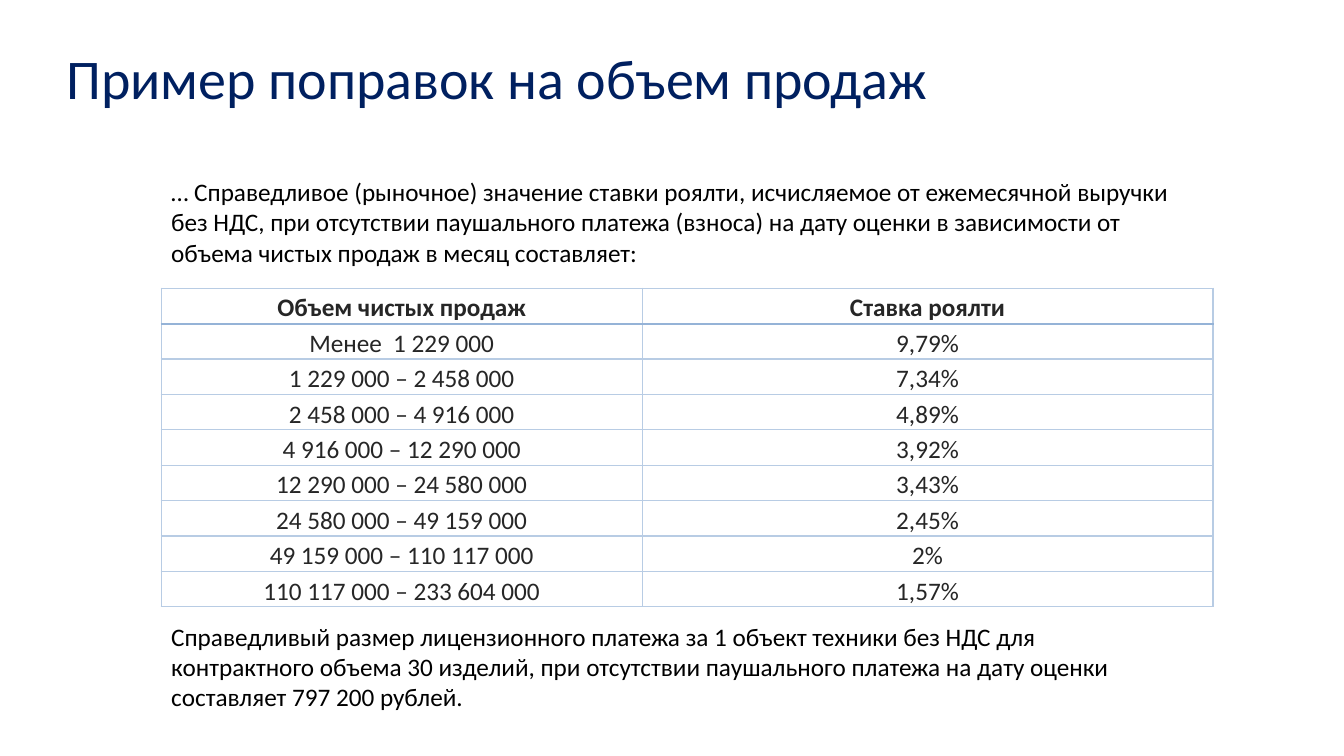
import pptx
import pptx.util
import pptx.dml.color
import pptx.enum.text
import pptx.oxml
import lxml.etree

COLORS = {
    "title": "002060",
    "body": "000000",
    "cell": "262626",
    "border": "B8CCE4",
    "header_border": "95B3D7",
}
ANCHOR = pptx.enum.text.MSO_ANCHOR
ALIGN = pptx.enum.text.PP_ALIGN

presentation = pptx.Presentation()
presentation.slide_width = pptx.util.Inches(13.33)
presentation.slide_height = pptx.util.Inches(7.5)
slide = presentation.slides.add_slide(presentation.slide_layouts[5])

# One percent of the slide's size is the unit of all places
column = presentation.slide_width / 100
row = presentation.slide_height / 100


def box(left, top, width, height):
    return int(left * column), int(top * row), int(width * column), int(height * row)


def format_text(text_frame, size, color, bold=False):
    for paragraph in text_frame.paragraphs:
        for run in paragraph.runs:
            run.font.name = "Calibri"
            run.font.size = pptx.util.Pt(size)
            run.font.bold = bold
            run.font.color.rgb = pptx.dml.color.RGBColor.from_string(COLORS[color])


# Title
title = slide.shapes.title
title.left, title.top, title.width, title.height = box(4.2, 3.33, 92.1, 14.93)
title.text_frame.text = "Пример поправок на объем продаж"
title.text_frame.vertical_anchor = ANCHOR.MIDDLE
title.text_frame.paragraphs[0].alignment = ALIGN.LEFT
title.text_frame.paragraphs[0].line_spacing = 0.9
format_text(title.text_frame, 40, "title")

# Royalty table
rates = [
    ("Объем чистых продаж", "Ставка роялти"),
    ("Менее  1 229 000", "9,79%"),
    ("1 229 000 – 2 458 000", "7,34%"),
    ("2 458 000 – 4 916 000", "4,89%"),
    ("4 916 000 – 12 290 000", "3,92%"),
    ("12 290 000 – 24 580 000", "3,43%"),
    ("24 580 000 – 49 159 000", "2,45%"),
    ("49 159 000 – 110 117 000", "2%"),
    ("110 117 000 – 233 604 000", "1,57%"),
]
table = slide.shapes.add_table(len(rates), 2, *box(12, 38.13, 78.25, 40.8)).table
table.first_row = False
table.horz_banding = False
for table_column, share in zip(table.columns, (35.78, 42.47)):
    table_column.width = int(share * column)

for row_index, values in enumerate(rates):
    for column_index, value in enumerate(values):
        cell = table.cell(row_index, column_index)
        cell.margin_left = cell.margin_right = pptx.util.Inches(0.07)
        cell.margin_top = cell.margin_bottom = 0
        is_rate = row_index > 0 and column_index == 1
        cell.vertical_anchor = ANCHOR.MIDDLE if is_rate else ANCHOR.TOP
        cell.text_frame.text = value
        cell.text_frame.paragraphs[0].alignment = ALIGN.CENTER
        cell.text_frame.paragraphs[0].line_spacing = 1.15
        format_text(cell.text_frame, 18, "cell", bold=row_index == 0)

        # Borders come before the fill in the cell properties
        properties = cell._tc.get_or_add_tcPr()
        for side in ("lnL", "lnR", "lnT", "lnB"):
            under_header = (row_index, side) in ((0, "lnB"), (1, "lnT"))
            color = COLORS["header_border" if under_header else "border"]
            line = lxml.etree.SubElement(properties, pptx.oxml.ns.qn("a:" + side))
            line.set("w", str(pptx.util.Pt(1.5 if under_header else 1)))
            fill = lxml.etree.SubElement(line, pptx.oxml.ns.qn("a:solidFill"))
            lxml.etree.SubElement(fill, pptx.oxml.ns.qn("a:srgbClr")).set("val", color)
        cell.fill.background()

# Paragraphs below and above the table
notes = [
    ("Справедливый размер лицензионного платежа за 1 объект техники без НДС для "
     "контрактного объема 30 изделий, при отсутствии паушального платежа на дату "
     "оценки составляет 797 200 рублей.", (12, 81.47, 76.67, 17.47)),
    ("… Справедливое (рыночное) значение ставки роялти, исчисляемое от ежемесячной "
     "выручки без НДС, при отсутствии паушального платежа (взноса) на дату оценки в "
     "зависимости от объема чистых продаж в месяц составляет:", (12, 22.67, 76.3, 13.47)),
]
for text, place in notes:
    text_frame = slide.shapes.add_textbox(*box(*place)).text_frame
    text_frame.word_wrap = True
    text_frame.text = text
    format_text(text_frame, 18, "body")

presentation.save("out.pptx")
